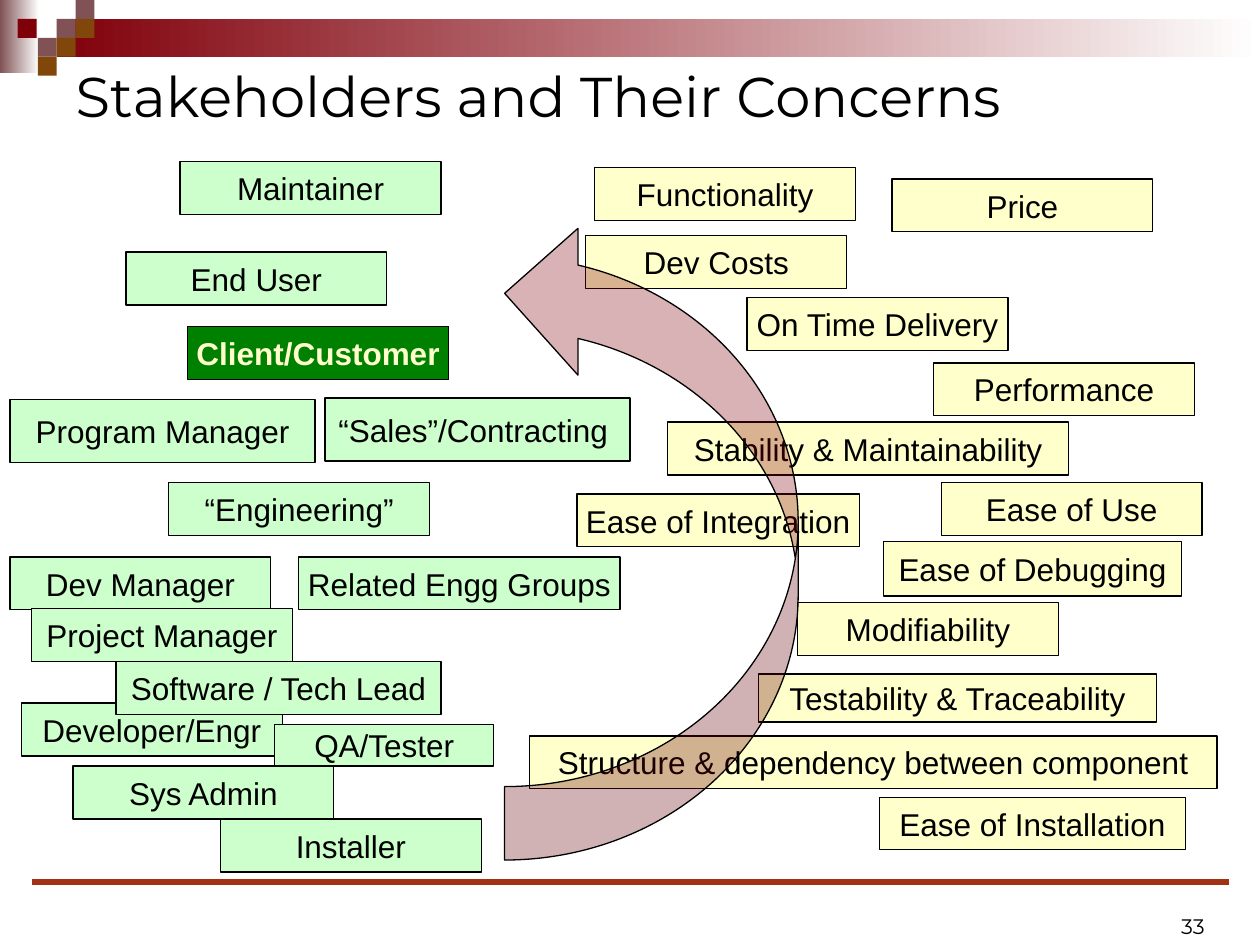
from pptx import Presentation
from pptx.dml.color import RGBColor
from pptx.enum.shapes import MSO_CONNECTOR as LINE, MSO_SHAPE as SHAPE
from pptx.enum.text import MSO_ANCHOR as ANCHOR, PP_ALIGN as ALIGN
from pptx.oxml.ns import qn
from pptx.util import Inches, Pt
from lxml.etree import SubElement

BLACK = RGBColor(0, 0, 0)
WHITE = RGBColor(255, 255, 255)
RED = RGBColor(0x80, 0x00, 0x0A)
MAUVE = RGBColor(0x80, 0x52, 0x55)
BROWN = RGBColor(0x81, 0x46, 0x0A)
RUST = RGBColor(0xA1, 0x32, 0x14)
CREAM = RGBColor(0xFF, 0xFF, 0xCC)
MINT = RGBColor(0xCC, 0xFF, 0xCC)
GREEN = RGBColor(0x00, 0x80, 0x00)

# Content: label, left, top, then width and height where not the usual
WIDE, HIGH = 2.07, 0.42
TITLE = "Stakeholders and Their Concerns"
PAGE = "33"
CONCERNS = [
    ("Ease of Integration", 4.58, 3.92, 2.24),
    ("Ease of Use", 7.47, 3.83),
    ("Functionality", 4.72, 1.33),
    ("Price", 7.08, 1.42),
    ("Dev Costs", 4.65, 1.87),
    ("On Time Delivery", 5.93, 2.36),
    ("Performance", 7.41, 2.88),
    ("Stability & Maintainability", 5.3, 3.35, 3.18),
    ("Ease of Debugging", 7.01, 4.3, 2.37, 0.43),
    ("Modifiability", 6.33, 4.78),
    ("Testability & Traceability", 6.02, 5.35, 3.16, 0.38),
    ("Structure & dependency between component", 4.2, 5.84, 5.46),
    ("Ease of Installation", 6.98, 6.33, 2.43, 0.41),
]
ROLES = [
    ("End User", 1, 2),
    ("“Sales”/Contracting ", 2.58, 3.16, 2.42, 0.5),
    ("Dev Manager", 0.08, 4.42),
    ("Developer/Engr", 0.17, 5.58),
    ("Sys Admin", 0.58, 6.08),
    ("Maintainer", 1.43, 1.28),
    ("Client/Customer", 1.49, 2.59),
    ("“Engineering”", 1.34, 3.83),
    ("Related Engg Groups", 2.37, 4.42, 2.55),
    ("QA/Tester", 2.18, 5.75, 1.74, 0.33),
    ("Program Manager", 0.08, 3.17, 2.42, 0.5),
]
FRONT = [
    ("Installer", 1.75, 6.5),
    ("Project Manager", 0.25, 4.83),
    ("Software / Tech Lead", 0.92, 5.25, 2.58),
]
KEY = "Client/Customer"

# Banner: fading bars, then tiles by left and top
BARS = [(0, 0, 0.31, 0.58, MAUVE), (0.45, 0.15, 9.55, 0.3, RED)]
TILE = 0.15
TILES = [
    (0.45, 0.15, MAUVE), (0.6, 0, MAUVE), (0.6, 0.15, BROWN),
    (0.3, 0.3, MAUVE), (0.14, 0.15, RED), (0.45, 0.3, BROWN),
    (0.3, 0.45, BROWN),
]

prs = Presentation()
prs.slide_width, prs.slide_height = Inches(10), Inches(7.5)
slide = prs.slides.add_slide(prs.slide_layouts[5])
shapes = slide.shapes


def add_form(kind, x, y, w, h, color=None):
    form = shapes.add_shape(kind, Inches(x), Inches(y), Inches(w), Inches(h))
    form.shadow.inherit = False
    form.line.fill.background()
    if color is not None:
        form.fill.solid()
        form.fill.fore_color.rgb = color
    return form


def outline(form):
    form.line.color.rgb = BLACK
    form.line.width = Pt(0.75)


def set_text(frame, text, size, face, align, anchor, color=BLACK):
    frame.text = text
    frame.vertical_anchor = anchor
    para = frame.paragraphs[0]
    para.alignment = align
    font = para.runs[0].font
    font.size, font.name, font.color.rgb = Pt(size), face, color
    return font


def add_label(text, x, y, w=WIDE, h=HIGH, color=MINT):
    key = text == KEY
    box = add_form(SHAPE.RECTANGLE, x, y, w, h, GREEN if key else color)
    outline(box)
    box.text_frame.word_wrap = False
    font = set_text(box.text_frame, text, 18, "Arial", ALIGN.CENTER,
                    ANCHOR.MIDDLE, CREAM if key else BLACK)
    font.bold = key


# Banner
for x, y, w, h, color in BARS:
    fill = add_form(SHAPE.RECTANGLE, x, y, w, h).fill
    fill.gradient()
    fill.gradient_angle = 0
    for stop, shade, place in zip(fill.gradient_stops, (color, WHITE), (0, 1)):
        stop.color.rgb = shade
        stop.position = place
for x, y, color in TILES:
    add_form(SHAPE.RECTANGLE, x, y, TILE, TILE, color)

# Footer rule and page number
rule = shapes.add_connector(LINE.STRAIGHT, Inches(0.25), Inches(7),
                            Inches(9.75), Inches(7))
rule.line.color.rgb = RUST
rule.line.width = Pt(3)
SubElement(rule._element.spPr, qn("a:effectLst"))
page = shapes.add_textbox(Inches(7.33), Inches(7), Inches(2.33), Inches(0.5))
page.text_frame.word_wrap = True
set_text(page.text_frame, PAGE, 12, "Montserrat", ALIGN.RIGHT, ANCHOR.BOTTOM)

# Title
title = shapes.title
title.left, title.top = Inches(0.5), Inches(0.42)
title.width, title.height = Inches(9), Inches(0.67)
set_text(title.text_frame, TITLE, 32, "Montserrat", ALIGN.LEFT, ANCHOR.MIDDLE)

# Concerns and stakeholders
for item in CONCERNS:
    add_label(*item, color=CREAM)
for item in ROLES:
    add_label(*item)

# Arrow from concerns to stakeholders
arrow = add_form(SHAPE.CURVED_UP_ARROW, 2.63, 3.12, 5.08, 2.33, RED)
arrow.rotation = 270
outline(arrow)
tint = arrow._element.spPr.find(qn("a:solidFill"))[0]
SubElement(tint, qn("a:alpha")).set("val", "30000")

# Stakeholders in front
for item in FRONT:
    add_label(*item)

prs.save("out.pptx")
